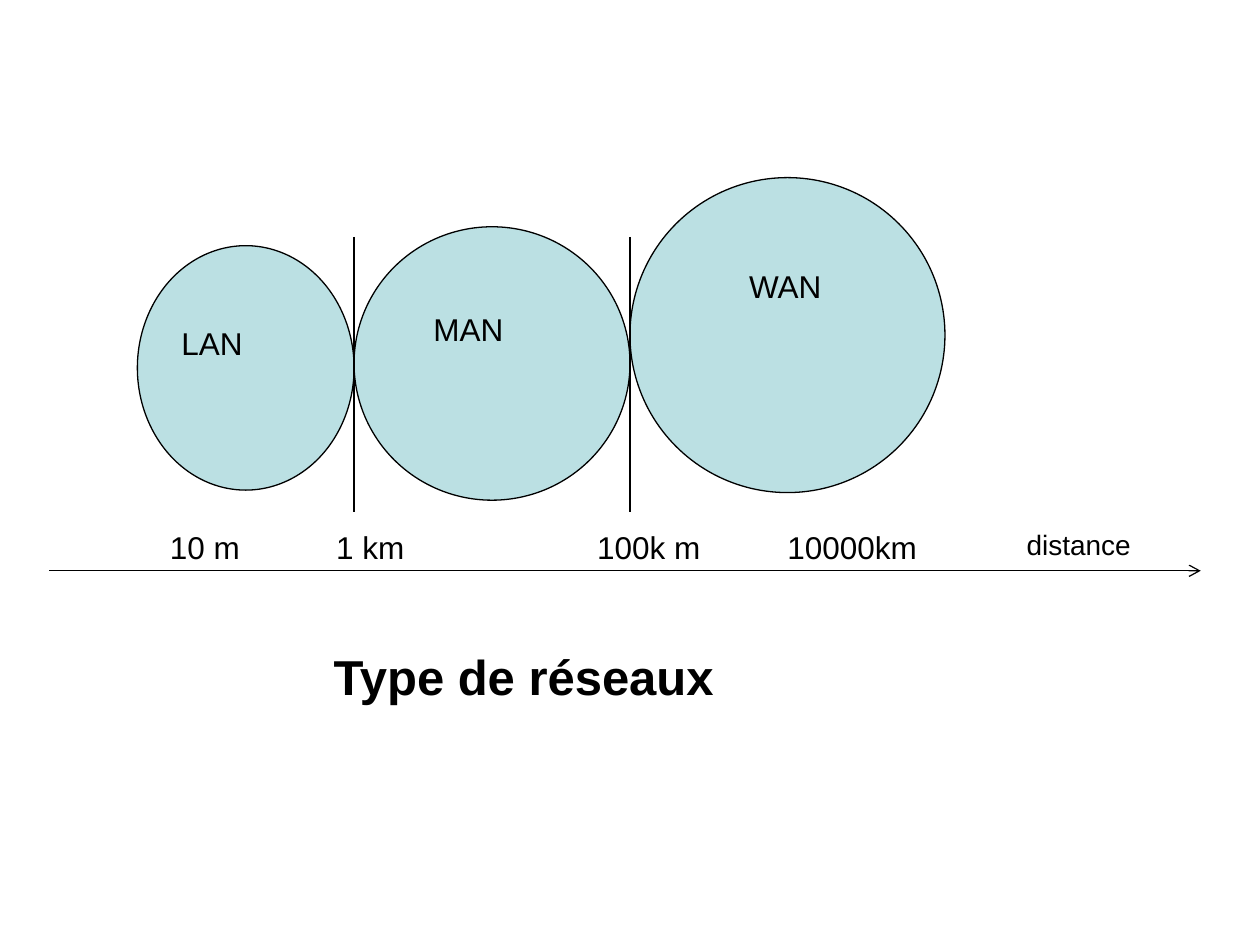
from typing import NamedTuple

from lxml import etree
from pptx import Presentation
from pptx.dml.color import RGBColor
from pptx.enum.shapes import MSO_CONNECTOR, MSO_SHAPE
from pptx.enum.text import MSO_ANCHOR, PP_ALIGN
from pptx.oxml.ns import qn
from pptx.util import Inches, Pt

ELLIPSE = MSO_SHAPE.OVAL
STRAIGHT = MSO_CONNECTOR.STRAIGHT
TOP = MSO_ANCHOR.TOP
LEFT = PP_ALIGN.LEFT

BLACK = "000000"
PALE_BLUE = "BBE0E3"
OUTLINE = Pt(0.75)
INSET = 0.1
AXIS_Y = 4.53
BOUNDARY_TOP, BOUNDARY_BOTTOM = 1.88, 4.06
DISTANCE_TABS = (1.32, 3.39, 4.9)


class Network(NamedTuple):
    name: str
    left: float
    top: float
    width: float
    height: float
    indent: float


class Label(NamedTuple):
    text: str
    left: float
    top: float
    width: float
    height: float
    size: int = 18
    bold: bool = False
    tabs: tuple[float, ...] = ()


NETWORKS = (
    Network("LAN", 1.09, 1.95, 1.72, 1.94, 0),
    Network("MAN", 2.81, 1.8, 2.19, 2.17, 0.21),
    Network("WAN", 5, 1.41, 2.5, 2.5, 0.48),
)
LABELS = (
    Label("10 m\t1 km\t100k m\t10000km", 1.25, 4.14, 7.34, 0.4, tabs=DISTANCE_TABS),
    Label("distance", 8.05, 4.14, 1.04, 0.37, size=16),
    Label("Type de réseaux", 2.55, 5.08, 3.29, 0.57, size=28, bold=True),
)


def set_color(target, color: str) -> None:
    """Colour a fill, or anything that has one."""
    fill = getattr(target, "fill", target)
    fill.solid()
    fill.fore_color.rgb = RGBColor.from_string(color)


def write(frame, text: str, size: int = 18, bold: bool = False,
          tabs: tuple[float, ...] = ()) -> None:
    frame.word_wrap = True
    frame.vertical_anchor = TOP
    paragraph = frame.paragraphs[0]
    paragraph.alignment = LEFT
    if tabs:
        tab_list = etree.SubElement(paragraph._p.get_or_add_pPr(), qn("a:tabLst"))
        for position in tabs:
            etree.SubElement(tab_list, qn("a:tab"), pos=str(Inches(position)), algn="l")
    run = paragraph.add_run()
    run.text = text
    for attribute, value in {"name": "Arial", "size": Pt(size), "bold": bold}.items():
        setattr(run.font, attribute, value)
    set_color(run.font, BLACK)


def add_network(slide, network: Network) -> None:
    ellipse = slide.shapes.add_shape(
        ELLIPSE, Inches(network.left), Inches(network.top),
        Inches(network.width), Inches(network.height))
    ellipse.shadow.inherit = False
    set_color(ellipse, PALE_BLUE)
    set_color(ellipse.line, BLACK)
    ellipse.line.width = OUTLINE
    frame = ellipse.text_frame
    frame.margin_left = Inches(INSET + network.indent)
    frame.margin_top = Inches(0.34)
    write(frame, network.name)


def add_label(slide, label: Label) -> None:
    box = slide.shapes.add_textbox(
        Inches(label.left), Inches(label.top), Inches(label.width), Inches(label.height))
    write(box.text_frame, label.text, label.size, label.bold, label.tabs)


def add_line(slide, x1: float, y1: float, x2: float, y2: float,
             arrow: bool = False) -> None:
    line = slide.shapes.add_connector(
        STRAIGHT, Inches(x1), Inches(y1), Inches(x2), Inches(y2))
    set_color(line.line, BLACK)
    line.line.width = OUTLINE
    if arrow:
        etree.SubElement(line.line._get_or_add_ln(), qn("a:tailEnd"), type="arrow")
    etree.SubElement(line._element.spPr, qn("a:effectLst"))


def main() -> None:
    presentation = Presentation()
    presentation.slide_width = Inches(10)
    presentation.slide_height = Inches(7.5)
    slide = presentation.slides.add_slide(presentation.slide_layouts[6])

    add_line(slide, 0.39, AXIS_Y, 9.53, AXIS_Y, arrow=True)
    for network in NETWORKS:
        add_network(slide, network)
    for network in NETWORKS[1:]:
        add_line(slide, network.left, BOUNDARY_TOP, network.left, BOUNDARY_BOTTOM)
    for label in LABELS:
        add_label(slide, label)

    presentation.save("out.pptx")


if __name__ == "__main__":
    main()
